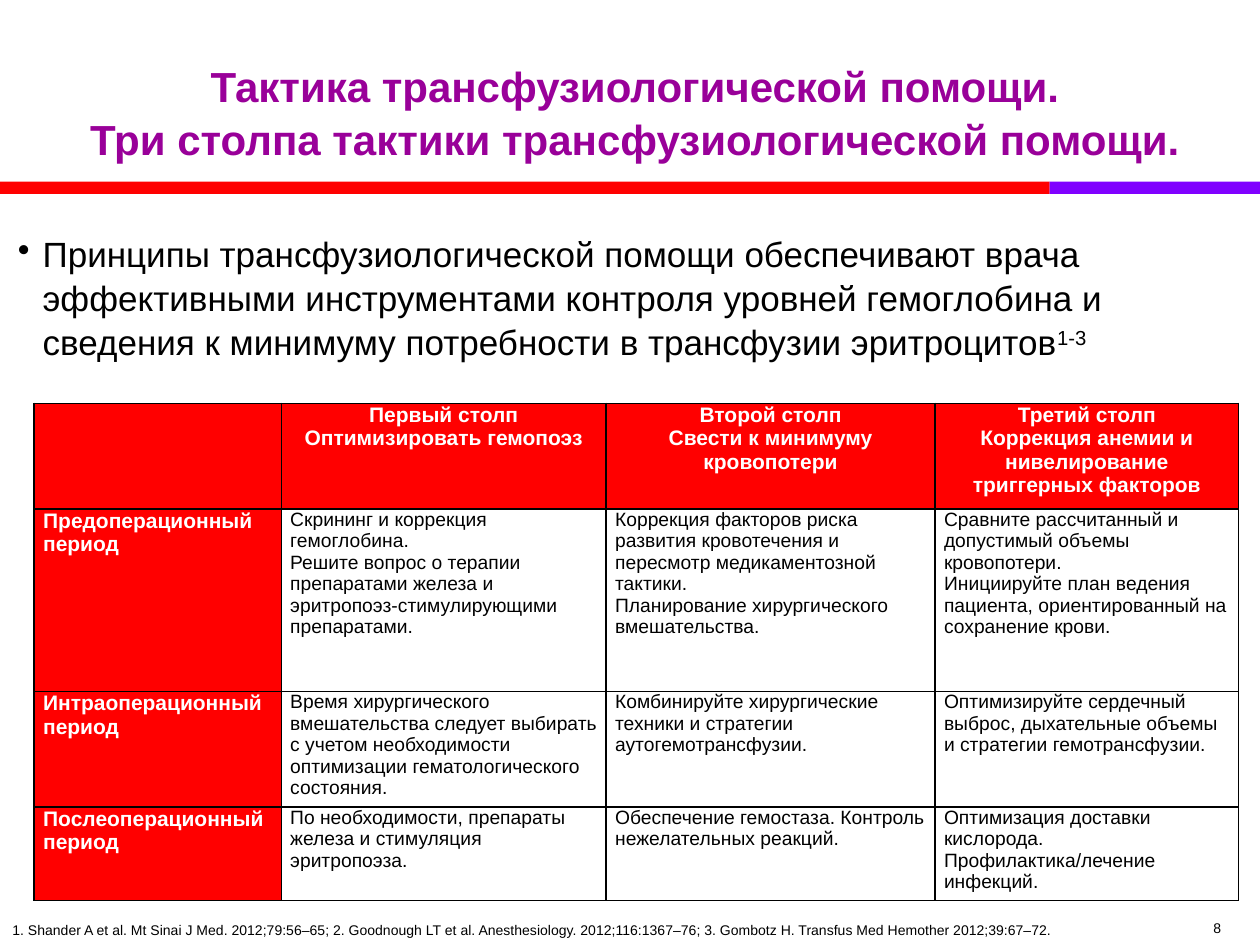
import pptx
import pptx.util
import pptx.dml.color
import pptx.enum.shapes
import pptx.enum.text
import pptx.oxml
import pptx.oxml.ns
from lxml import etree

Cm, Pt = pptx.util.Cm, pptx.util.Pt
RGBColor = pptx.dml.color.RGBColor
ALIGN = pptx.enum.text.PP_ALIGN
ANCHOR = pptx.enum.text.MSO_ANCHOR
RED = RGBColor(0xFF, 0, 0)
VIOLET = RGBColor(0x80, 0, 0xFF)
PURPLE = RGBColor(0x99, 0, 0x99)
BLACK = RGBColor(0, 0, 0)
WHITE = RGBColor(0xFF, 0xFF, 0xFF)

TITLE = "Тактика трансфузиологической помощи.\vТри столпа тактики трансфузиологической помощи."
LEAD = ("Принципы трансфузиологической помощи обеспечивают врача эффективными "
        "инструментами контроля уровней гемоглобина и сведения к минимуму "
        "потребности в трансфузии эритроцитов")
CITED = "1-3"
SOURCES = ("1. Shander A et al. Mt Sinai J Med. 2012;79:56–65; "
           "2. Goodnough LT et al. Anesthesiology. 2012;116:1367–76; "
           "3. Gombotz H. Transfus Med Hemother 2012;39:67–72.")
PAGE = "8"
BARS = [(0, 21.16, RED), (21.16, 4.24, VIOLET)]
COLS = [4.98, 6.55, 6.63, 6.12]
ROWS = [2.13, 3.68, 2.29, 1.88]
# Each line of a cell is one paragraph.
CELLS = [
    ["",
     "Первый столп\nОптимизировать гемопоэз",
     "Второй столп\nСвести к минимуму кровопотери",
     "Третий столп\nКоррекция анемии и нивелирование триггерных факторов"],
    ["Предоперационный период",
     "Скрининг и коррекция гемоглобина.\nРешите вопрос о терапии препаратами "
     "железа и эритропоэз-стимулирующими препаратами.",
     "Коррекция факторов риска развития кровотечения и пересмотр "
     "медикаментозной тактики.\nПланирование хирургического вмешательства.",
     "Сравните рассчитанный и допустимый объемы кровопотери.\nИнициируйте план "
     "ведения пациента, ориентированный на сохранение крови."],
    ["Интраоперационный период",
     "Время хирургического вмешательства следует выбирать с учетом "
     "необходимости оптимизации гематологического состояния.",
     "Комбинируйте хирургические техники и стратегии аутогемотрансфузии.",
     "Оптимизируйте сердечный выброс, дыхательные объемы и стратегии гемотрансфузии."],
    ["Послеоперационный период",
     "По необходимости, препараты железа и стимуляция эритропоэза.",
     "Обеспечение гемостаза. Контроль нежелательных реакций.",
     "Оптимизация доставки кислорода. Профилактика/лечение инфекций."],
]


def style(par, size, color=BLACK, bold=False, align=ALIGN.LEFT):
    font = par.font
    font.name, font.size, font.bold = "Arial", Pt(size), bold
    font.color.rgb = color
    par.alignment = align


def inset(frame, side=0, edge=0):
    frame.margin_left = frame.margin_right = Cm(side)
    frame.margin_top = frame.margin_bottom = Cm(edge)


def add_text(slide, box, text, size, wrap=True):
    frame = slide.shapes.add_textbox(*map(Cm, box)).text_frame
    frame.word_wrap = wrap
    inset(frame)
    frame.text = text
    style(frame.paragraphs[0], size)
    return frame


def add_bullet(par, indent):
    props = par._p.get_or_add_pPr()
    props.set("marL", str(Cm(indent)))
    props.set("indent", str(-Cm(indent)))
    mark = pptx.oxml.parse_xml(
        f'<a:buChar {pptx.oxml.ns.nsdecls("a")} char="•"/>')
    props.insert_element_before(mark, "a:tabLst", "a:defRPr", "a:extLst")


def add_border(cell):
    """Draw a thin black line on all four sides."""
    props = cell._tc.get_or_add_tcPr()
    for spot, side in enumerate("LRTB"):
        line = pptx.oxml.parse_xml(
            f'<a:ln{side} {pptx.oxml.ns.nsdecls("a")} w="{Pt(1)}">'
            f'<a:solidFill><a:srgbClr val="{BLACK}"/></a:solidFill></a:ln{side}>')
        props.insert(spot, line)


def fill_cell(cell, text, row, col):
    head = row == 0 or col == 0
    cell.fill.solid()
    cell.fill.fore_color.rgb = RED if head else WHITE
    inset(cell, 0.18)
    cell.vertical_anchor = ANCHOR.TOP
    cell.text = text
    align = ALIGN.CENTER if row == 0 else ALIGN.JUSTIFY if col == 0 else ALIGN.LEFT
    for par in cell.text_frame.paragraphs:
        style(par, 12 if head else 11, WHITE if head else BLACK, head, align)
    if head:
        par.space_after = Pt(6)
    add_border(cell)


def add_grid(slide):
    table = slide.shapes.add_table(
        len(ROWS), len(COLS), Cm(0.69), Cm(8.13),
        Cm(sum(COLS)), Cm(sum(ROWS))).table
    for col, width in zip(table.columns, COLS):
        col.width = Cm(width)
    for row, height in zip(table.rows, ROWS):
        row.height = Cm(height)
    for i, texts in enumerate(CELLS):
        for j, text in enumerate(texts):
            fill_cell(table.cell(i, j), text, i, j)


def main():
    deck = pptx.Presentation()
    deck.slide_width, deck.slide_height = Cm(25.4), Cm(19.05)
    slide = deck.slides.add_slide(deck.slide_layouts[5])

    for left, width, color in BARS:
        bar = slide.shapes.add_shape(
            pptx.enum.shapes.MSO_SHAPE.RECTANGLE,
            Cm(left), Cm(3.66), Cm(width), Cm(0.25))
        bar.shadow.inherit = False
        bar.fill.solid()
        bar.fill.fore_color.rgb = color
        bar.line.fill.background()

    title = slide.shapes.title
    title.left, title.top = Cm(1.7), Cm(0.91)
    title.width, title.height = Cm(22.2), Cm(2.39)
    frame = title.text_frame
    frame.auto_size = pptx.enum.text.MSO_AUTO_SIZE.NONE
    frame.vertical_anchor = ANCHOR.BOTTOM
    inset(frame)
    par = frame.paragraphs[0]
    par.text = TITLE
    par.line_spacing = 1.05
    style(par, 24, PURPLE, True, ALIGN.CENTER)

    par = add_text(slide, (0.36, 4.65, 24.64, 4.85), LEAD, 20).paragraphs[0]
    par.line_spacing = 1.05
    par.space_before = Pt(4)
    add_bullet(par, 0.5)
    mark = par.add_run()
    mark.text = CITED
    mark.font._element.set("baseline", "30000")

    add_grid(slide)

    notes = add_text(slide, (0, 18.44, 22.63, 0.61), SOURCES, 8)
    inset(notes, 0.25, 0.13)
    notes.vertical_anchor = ANCHOR.BOTTOM
    add_text(slide, (24.46, 18.54, 0.56, 0.33), PAGE, 8, wrap=False)
    deck.save("out.pptx")


if __name__ == "__main__":
    main()
